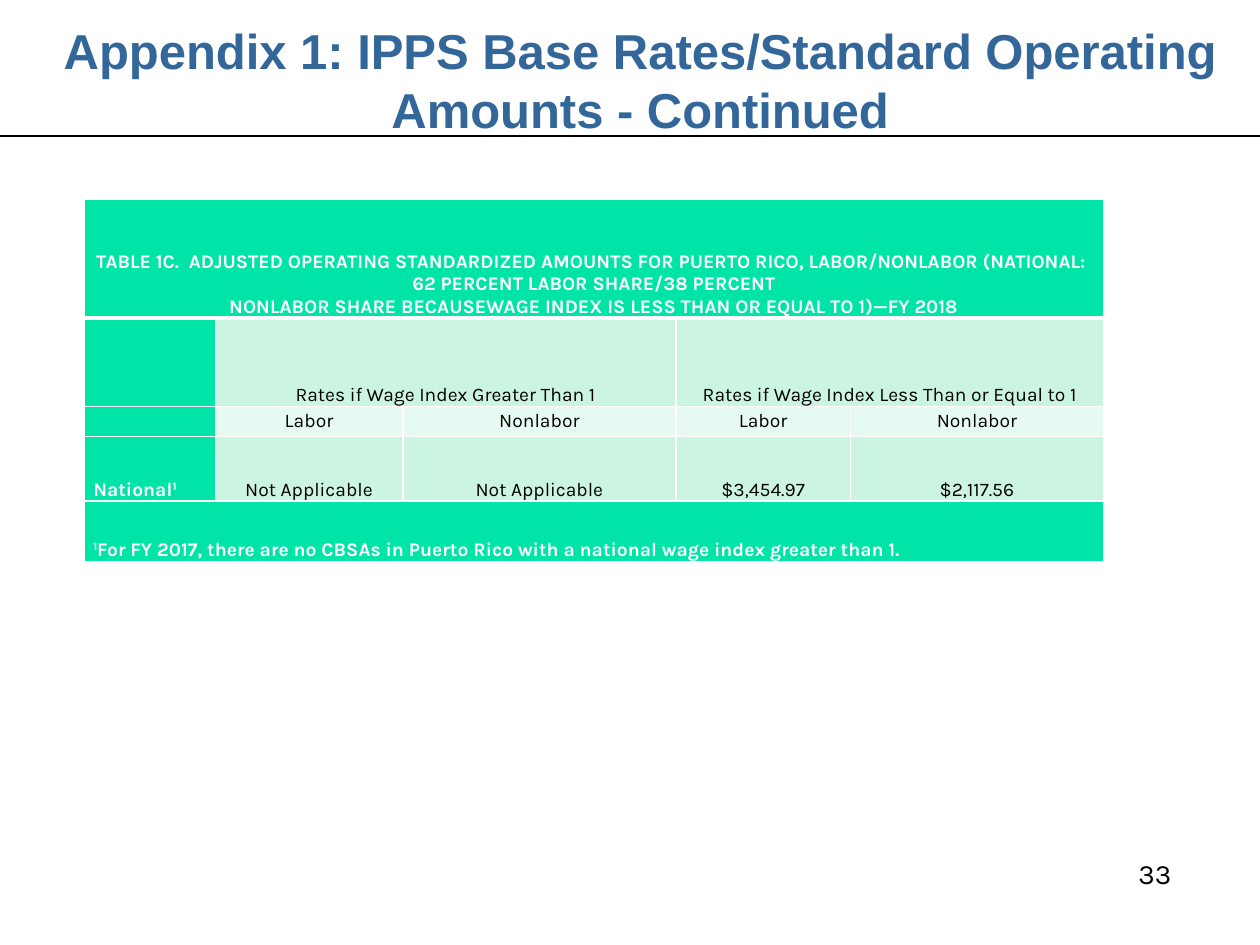
from lxml import etree
from pptx import Presentation
from pptx.dml.color import RGBColor
from pptx.enum import shapes, text
from pptx.oxml import ns
from pptx.util import Cm, Pt

GREEN, MINT, PALE = "00E4A8", "CCF5E1", "E7FAF1"
WHITE, BLACK, BLUE = "FFFFFF", "000000", "336699"
COLS = [2.64, 3.78, 5.51, 3.51, 5.11]
ROWS = [2.39, 1.78, 0.61, 1.3, 1.22]
HEAD = ("TABLE 1C.  ADJUSTED OPERATING STANDARDIZED AMOUNTS FOR PUERTO RICO, "
        "LABOR/NONLABOR (NATIONAL:  62 PERCENT LABOR SHARE/38 PERCENT\n"
        "NONLABOR SHARE BECAUSEWAGE INDEX IS LESS THAN OR EQUAL TO 1)—FY 2018")
NOTE = "For FY 2017, there are no CBSAs in Puerto Rico with a national wage index greater than 1."
CELLS = [
    [HEAD, "", "", "", ""],
    ["", "Rates if Wage Index Greater Than 1", "",
     "Rates if Wage Index Less Than or Equal to 1", ""],
    ["", "Labor", "Nonlabor", "Labor", "Nonlabor"],
    ["National", "Not Applicable", "Not Applicable", "$3,454.97", "$2,117.56"],
    ["", "", "", "", ""],
]
SPANS = [(0, 0, 4), (1, 1, 2), (1, 3, 4), (4, 0, 4)]


def color(code):
    return RGBColor.from_string(code)


def style(font, face, size, code, bold=False):
    font.name, font.size, font.bold = face, Pt(size), bold
    font.color.rgb = color(code)


def add_sub(parent, tag, **attrs):
    return etree.SubElement(parent, ns.qn(tag), attrs)


def add_title(slide, box):
    title = slide.shapes.title
    title.left, title.top, title.width, title.height = map(Cm, box)
    frame = title.text_frame
    frame.text = "Appendix 1: IPPS Base Rates/Standard Operating Amounts - Continued"
    frame.auto_size = text.MSO_AUTO_SIZE.NONE
    frame.vertical_anchor = text.MSO_ANCHOR.MIDDLE
    par = frame.paragraphs[0]
    par.alignment = text.PP_ALIGN.CENTER
    style(par.runs[0].font, "Arial", 28, BLUE, True)


def add_rule(slide, left, top, width):
    rule = slide.shapes.add_connector(
        shapes.MSO_CONNECTOR.STRAIGHT, Cm(left), Cm(top), Cm(left + width), Cm(top))
    rule.line.color.rgb = color(BLACK)
    rule.line.width = Pt(0.75)
    add_sub(rule._element.spPr, "a:effectLst")


def set_edges(cell, row):
    """Draw white borders, with a thick one under the heading row."""
    props = cell._tc.get_or_add_tcPr()
    thick = {"T": row == 1, "B": row == 0}
    for side in "LRTB":
        width = Pt(3 if thick.get(side) else 1)
        edge = add_sub(props, f"a:ln{side}", w=str(width))
        add_sub(add_sub(edge, "a:solidFill"), "a:srgbClr", val=WHITE)


def add_sup(par):
    run = par.add_run()
    run.text = "1"
    run._r.get_or_add_rPr().set("baseline", "30000")


def fill_cell(cell, row, col):
    green = row in (0, 4) or col == 0
    set_edges(cell, row)
    cell.fill.solid()
    cell.fill.fore_color.rgb = color(GREEN if green else PALE if row == 2 else MINT)
    cell.margin_left = cell.margin_right = Cm(0.18)
    cell.margin_top = cell.margin_bottom = 0
    cell.vertical_anchor = text.MSO_ANCHOR.MIDDLE if row == 2 else text.MSO_ANCHOR.BOTTOM
    frame = cell.text_frame
    frame.text = CELLS[row][col]
    if col == 0 and row >= 3:
        add_sup(frame.paragraphs[0])
    if col == 0 and row == 4:
        frame.paragraphs[0].add_run().text = NOTE
    for par in frame.paragraphs:
        if row == 0 or col > 0:
            par.alignment = text.PP_ALIGN.CENTER
        for run in par.runs:
            style(run.font, "Karla", 11, WHITE if green else BLACK, green)
        if not par.runs:
            add_sub(par._p, "a:endParaRPr", sz="1100")


def add_rates(slide, left, top):
    frame = slide.shapes.add_table(
        len(ROWS), len(COLS), Cm(left), Cm(top), Cm(sum(COLS)), Cm(sum(ROWS)))
    table = frame.table
    table.first_row = table.horz_banding = False
    for col, width in zip(table.columns, COLS):
        col.width = Cm(width)
    for row, height in zip(table.rows, ROWS):
        row.height = Cm(height)
    for row in range(len(ROWS)):
        for col in range(len(COLS)):
            fill_cell(table.cell(row, col), row, col)
    for row, start, end in SPANS:
        table.cell(row, start).merge(table.cell(row, end))


def add_page(slide, box):
    frame = slide.shapes.add_textbox(*map(Cm, box)).text_frame
    frame.word_wrap = True
    frame.text = "33"
    par = frame.paragraphs[0]
    par.alignment = text.PP_ALIGN.CENTER
    style(par.runs[0].font, "Karla", 16, BLACK)


def main():
    deck = Presentation()
    deck.slide_width, deck.slide_height = Cm(25.4), Cm(19.05)
    slide = deck.slides.add_slide(deck.slide_layouts[5])
    add_title(slide, (0.84, 0.43, 24.13, 2.34))
    add_rule(slide, 0, 2.74, 25.4)
    add_rates(slide, 1.7, 4.02)
    add_page(slide, (22.43, 17.15, 1.7, 1.9))
    deck.save("out.pptx")


if __name__ == "__main__":
    main()
